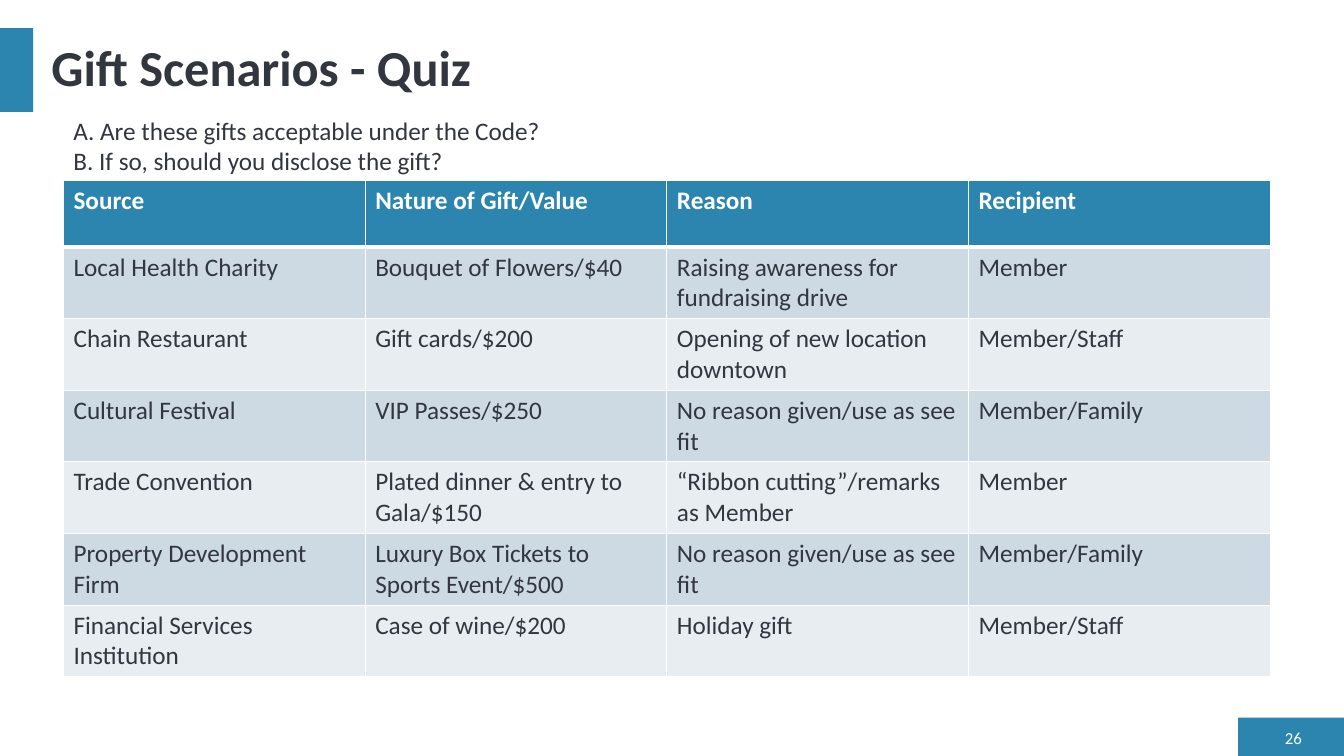
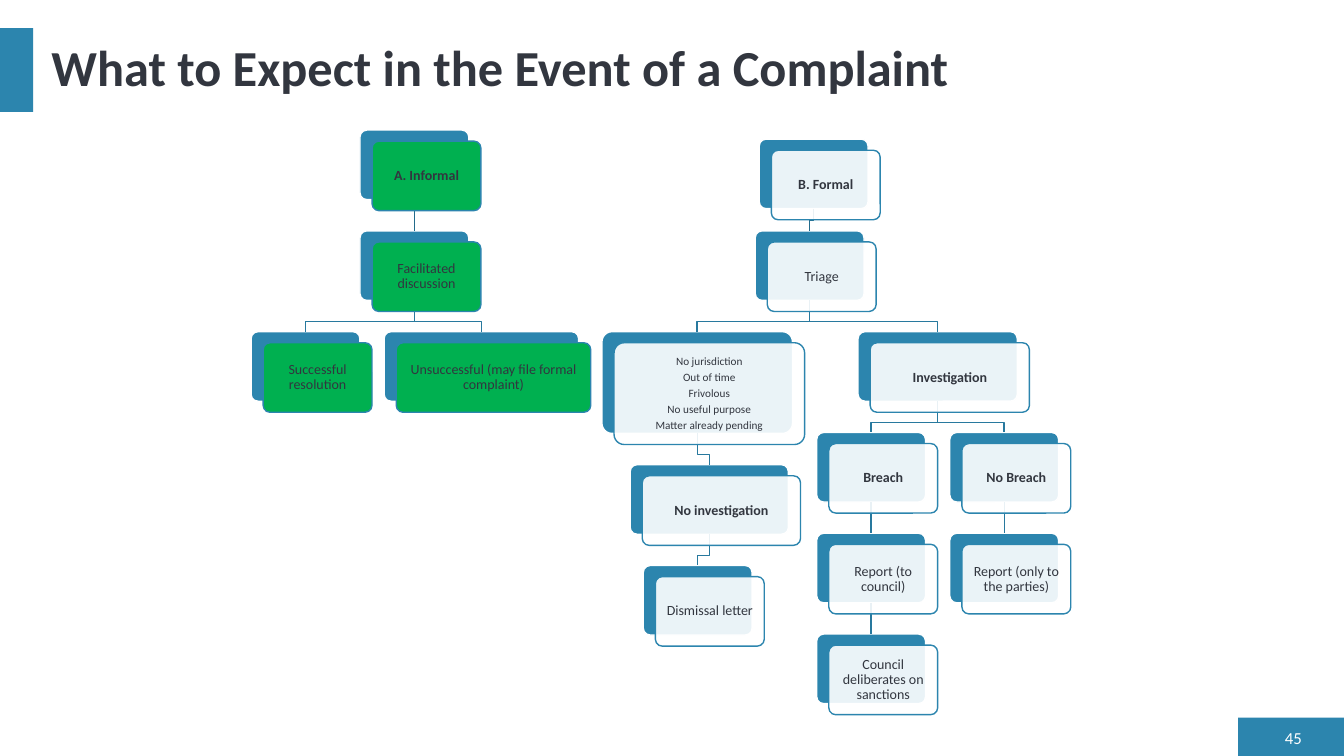
from lxml import etree
from pptx import Presentation
from pptx.dml.color import RGBColor
from pptx.enum import shapes, text
from pptx.oxml.ns import qn
from pptx.util import Inches, Pt

BLUE = RGBColor(0x2C, 0x85, 0xAE)
INK = RGBColor(0x32, 0x36, 0x3F)
WHITE = RGBColor(0xFF, 0xFF, 0xFF)
GREEN = RGBColor(0x00, 0xB0, 0x50)
LINK = RGBColor(0x28, 0x79, 0x9E)
ROOT_LINK = RGBColor(0x23, 0x6B, 0x8B)
ROW_FILLS = [RGBColor(0xCD, 0xD9, 0xE3), RGBColor(0xE8, 0xED, 0xF2)]
FONT = "Calibri"
LEFT, CENTER, RIGHT = text.PP_ALIGN.LEFT, text.PP_ALIGN.CENTER, text.PP_ALIGN.RIGHT
TOP, MIDDLE = text.MSO_ANCHOR.TOP, text.MSO_ANCHOR.MIDDLE

BANDS = [(12.28, 7.12, 1.05, 0.38), (0, 0.28, 0.33, 0.83)]
QUESTIONS = [
    "A. Are these gifts acceptable under the Code?",
    "B. If so, should you disclose the gift?",
]
GIFTS = [
    ("Source", "Nature of Gift/Value", "Reason", "Recipient"),
    ("Local Health Charity", "Bouquet of Flowers/$40",
     "Raising awareness for fundraising drive", "Member"),
    ("Chain Restaurant", "Gift cards/$200",
     "Opening of new location downtown", "Member/Staff"),
    ("Cultural Festival", "VIP Passes/$250",
     "No reason given/use as see fit", "Member/Family"),
    ("Trade Convention", "Plated dinner & entry to Gala/$150",
     "“Ribbon cutting”/remarks as Member", "Member"),
    ("Property Development Firm", "Luxury Box Tickets to Sports Event/$500",
     "No reason given/use as see fit", "Member/Family"),
    ("Financial Services Institution", "Case of wine/$200",
     "Holiday gift", "Member/Staff"),
]
ROW_HEIGHTS = [0.66, 0.7] + [0.66] * 5

REASONS = ["No jurisdiction", "Out of time", "Frivolous", "No useful purpose",
           "Matter already pending"]
TOP_ROW, BOX_W, BOX_H, LIST_H = 1.29, 1.08, 0.69, 1.01
SHIFT_X, SHIFT_Y, KNEE = 0.12, 0.11, 0.1
# name: lines, parent, left, row, width, bold
STEPS = {
    "informal": (["A. Informal"], None, 3.57, 0, BOX_W, True),
    "discussion": (["Facilitated discussion"], "informal", 3.57, 1, BOX_W, False),
    "resolved": (["Successful resolution"], "discussion", 2.49, 2, BOX_W, False),
    "unresolved": (["Unsuccessful (may file formal complaint)"], "discussion",
                   3.81, 2, 1.93, False),
    "formal": (["B. Formal"], None, 7.53, 0.09, BOX_W, True),
    "triage": (["Triage"], "formal", 7.49, 1, BOX_W, False),
    "reasons": (REASONS, "triage", 5.97, 2, 1.89, False),
    "no_investigation": (["No investigation"], "reasons", 6.25, 3.32, 1.57, True),
    "dismissal": (["Dismissal letter"], "no_investigation", 6.38, 4.32, BOX_W, False),
    "investigation": (["Investigation"], "triage", 8.51, 2, 1.58, True),
    "breach": (["Breach"], "investigation", 8.1, 3, BOX_W, True),
    "report": (["Report (to council)"], "breach", 8.1, 4, BOX_W, False),
    "sanctions": (["Council deliberates on sanctions"], "report", 8.1, 5, BOX_W, False),
    "no_breach": (["No Breach"], "investigation", 9.42, 3, BOX_W, True),
    "private_report": (["Report (only to the parties)"], "no_breach", 9.42, 4,
                       BOX_W, False),
}
INFORMAL = {"informal", "discussion", "resolved", "unresolved"}


def write(tf, lines, size=18, color=INK, bold=False, align=LEFT, anchor=TOP,
          inset=None, spacing=None, after=0):
    tf.word_wrap = True
    tf.auto_size = text.MSO_AUTO_SIZE.NONE
    tf.vertical_anchor = anchor
    if inset is not None:
        tf.margin_left = tf.margin_right = tf.margin_top = tf.margin_bottom = Inches(inset)
    for i, line in enumerate(lines):
        p = tf.add_paragraph() if i else tf.paragraphs[0]
        p.alignment, p.line_spacing, p.space_after = align, spacing, Pt(after)
        r = p.add_run()
        r.text = line
        f = r.font
        f.name, f.size, f.bold = FONT, Pt(size), bold
        f.color.rgb = color


def add_box(s, kind, at, fill, line=None):
    sp = s.shapes.add_shape(kind, *map(Inches, at))
    sp.shadow.inherit = False
    sp.fill.solid()
    sp.fill.fore_color.rgb = fill
    if line is None:
        sp.line.fill.background()
    else:
        sp.line.color.rgb = line
        sp.line.width = Pt(1)
    return sp


def add_text(s, at, lines, **fmt):
    write(s.shapes.add_textbox(*map(Inches, at)).text_frame, lines, **fmt)


def set_up_layout(layout, s):
    title = layout.placeholders[0]
    title.left, title.top, title.width, title.height = map(Inches, (0.41, 0.28, 12.6, 0.83))
    for at in BANDS:
        band = add_box(s, shapes.MSO_SHAPE.RECTANGLE, at, BLUE)
        layout.shapes.element.insert(2, band.element)


def add_heading(s, title, number):
    write(s.shapes.title.text_frame, [title], size=36, bold=True, anchor=MIDDLE, spacing=0.9)
    add_text(s, (12.6, 7.2, 0.41, 0.23), [number], size=12, color=WHITE,
             align=RIGHT, anchor=MIDDLE)


def set_borders(cell, bottom):
    tcPr = cell._tc.get_or_add_tcPr()
    for i, (side, width) in enumerate((("L", 1), ("R", 1), ("T", 1), ("B", bottom))):
        ln = etree.Element(qn("a:ln" + side), w=str(Pt(width)))
        fill = etree.SubElement(ln, qn("a:solidFill"))
        etree.SubElement(fill, qn("a:srgbClr"), val=str(WHITE))
        tcPr.insert(i, ln)


def add_gift_table(s):
    frame = s.shapes.add_table(len(GIFTS), len(GIFTS[0]), Inches(0.63), Inches(1.79),
                               Inches(11.97), Inches(sum(ROW_HEIGHTS)))
    table = frame.table
    for i, (gift, height) in enumerate(zip(GIFTS, ROW_HEIGHTS)):
        table.rows[i].height = Inches(height)
        header = i == 0
        for j, value in enumerate(gift):
            cell = table.cell(i, j)
            cell.fill.solid()
            cell.fill.fore_color.rgb = BLUE if header else ROW_FILLS[(i - 1) % 2]
            write(cell.text_frame, [value], color=WHITE if header else INK, bold=header)
            set_borders(cell, 3 if header else 1)


def add_step_box(s, at, fill, line):
    sp = add_box(s, shapes.MSO_SHAPE.ROUNDED_RECTANGLE, at, fill, line)
    sp.adjustments[0] = 0.1
    return sp


def link(s, parent, child, color):
    x1, y1 = parent.left + parent.width // 2, parent.top + parent.height
    x2, y2 = child.left + child.width // 2, child.top
    if abs(x1 - x2) < Inches(0.01):
        line = s.shapes.add_connector(shapes.MSO_CONNECTOR.STRAIGHT, x1, y1, x2, y2)
        line.begin_connect(parent, 2)
        line.end_connect(child, 0)
        etree.SubElement(line.element.spPr, qn("a:effectLst"))
    else:
        knee = y2 - Inches(KNEE)
        fb = s.shapes.build_freeform(x1, y1)
        fb.add_line_segments([(x1, knee), (x2, knee), (x2, y2)], close=False)
        line = fb.convert_to_shape()
        line.fill.background()
        line.shadow.inherit = False
    line.line.color.rgb = color
    line.line.width = Pt(1)


def add_flow(s):
    backs = {}
    for name, (lines, _, left, row, width, _) in STEPS.items():
        height = LIST_H if len(lines) > 1 else BOX_H
        backs[name] = add_step_box(s, (left, TOP_ROW + row, width, height), BLUE, WHITE)
    for name, (_, parent, *_) in STEPS.items():
        if parent:
            color = LINK if STEPS[parent][1] else ROOT_LINK
            link(s, backs[parent], backs[name], color)
    for name, (lines, _, left, row, width, bold) in STEPS.items():
        many = len(lines) > 1
        at = (left + SHIFT_X, TOP_ROW + row + SHIFT_Y, width, LIST_H if many else BOX_H)
        front = add_step_box(s, at, GREEN if name in INFORMAL else WHITE, BLUE)
        if name not in INFORMAL:
            clr = front.element.spPr.find(qn("a:solidFill"))[0]
            etree.SubElement(clr, qn("a:alpha"), val="90000")
        size = 8 if many else 10
        write(front.text_frame, lines, size=size, bold=bold, align=CENTER, anchor=MIDDLE,
              inset=0.06, spacing=0.9, after=size * 0.35)


def main():
    prs = Presentation()
    prs.slide_width, prs.slide_height = Inches(13.33), Inches(7.5)
    layout = prs.slide_layouts[5]

    s = prs.slides.add_slide(layout)
    set_up_layout(layout, s)
    add_heading(s, "Gift Scenarios - Quiz", "26")
    add_gift_table(s)
    add_text(s, (0.63, 1.09, 11.97, 0.7), QUESTIONS)

    s = prs.slides.add_slide(layout)
    add_heading(s, "What to Expect in the Event of a Complaint", "45")
    add_flow(s)

    prs.save("out.pptx")


if __name__ == "__main__":
    main()
